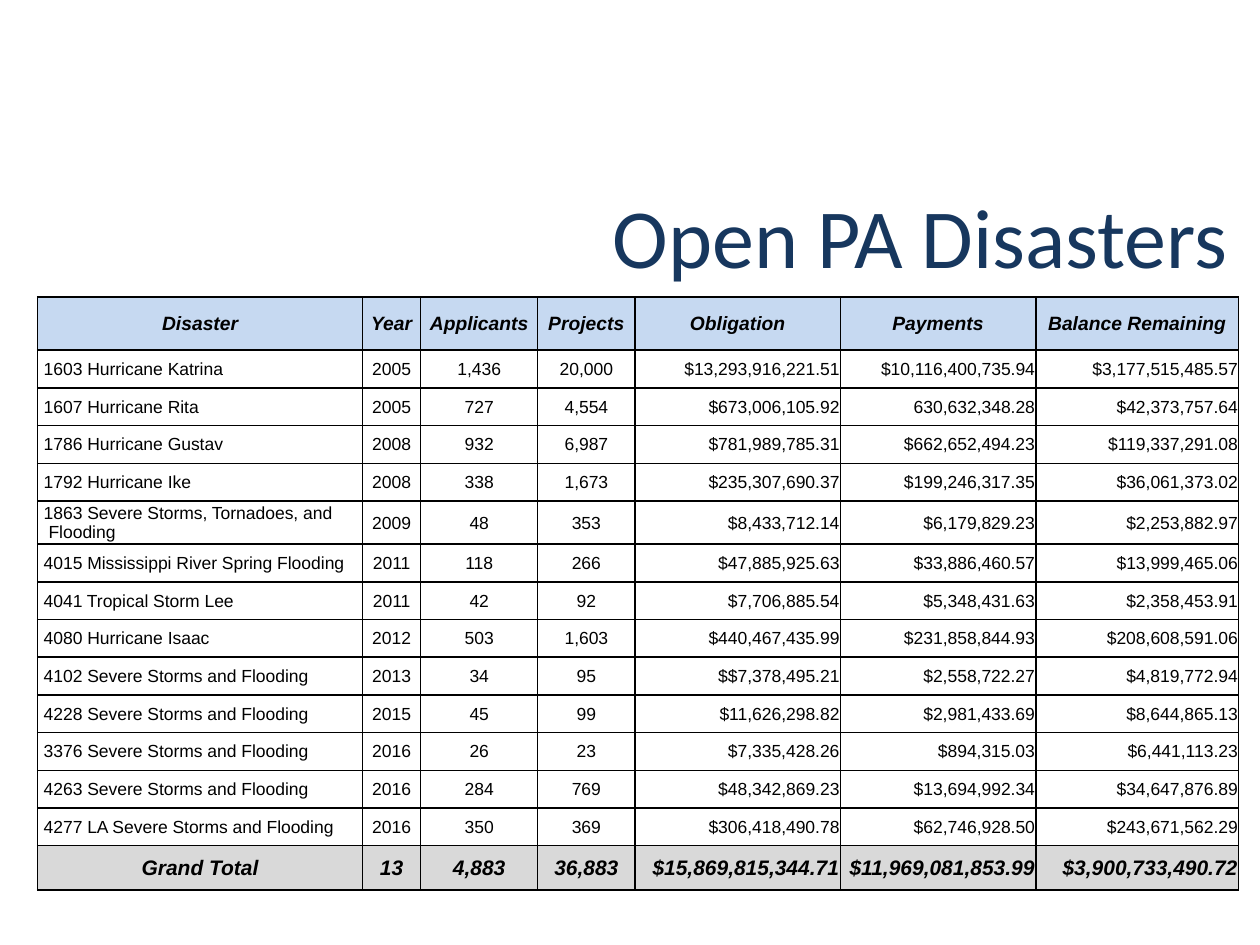
from lxml.etree import SubElement
from pptx import Presentation
from pptx.dml.color import RGBColor
from pptx.enum.text import MSO_ANCHOR as Anchor, PP_ALIGN as Align
from pptx.oxml.ns import qn
from pptx.util import Cm, Pt

NAVY = RGBColor(0x17, 0x37, 0x5E)
BLACK = RGBColor(0x00, 0x00, 0x00)
LIGHT_BLUE = RGBColor(0xC6, 0xD9, 0xF1)
LIGHT_GRAY = RGBColor(0xD9, 0xD9, 0xD9)

HEADER = ["Disaster", "Year", "Applicants", "Projects", "Obligation", "Payments", "Balance Remaining"]
DISASTERS = [
    ["1603 Hurricane Katrina", "2005", "1,436", "20,000", "$13,293,916,221.51", "$10,116,400,735.94", "$3,177,515,485.57"],
    ["1607 Hurricane Rita", "2005", "727", "4,554", "$673,006,105.92", "630,632,348.28", "$42,373,757.64"],
    ["1786 Hurricane Gustav", "2008", "932", "6,987", "$781,989,785.31", "$662,652,494.23", "$119,337,291.08"],
    ["1792 Hurricane Ike", "2008", "338", "1,673", "$235,307,690.37", "$199,246,317.35", "$36,061,373.02"],
    ["1863 Severe Storms, Tornadoes, and Flooding", "2009", "48", "353", "$8,433,712.14", "$6,179,829.23", "$2,253,882.97"],
    ["4015 Mississippi River Spring Flooding", "2011", "118", "266", "$47,885,925.63", "$33,886,460.57", "$13,999,465.06"],
    ["4041 Tropical Storm Lee", "2011", "42", "92", "$7,706,885.54", "$5,348,431.63", "$2,358,453.91"],
    ["4080 Hurricane Isaac", "2012", "503", "1,603", "$440,467,435.99", "$231,858,844.93", "$208,608,591.06"],
    ["4102 Severe Storms and Flooding", "2013", "34", "95", "$$7,378,495.21", "$2,558,722.27", "$4,819,772.94"],
    ["4228 Severe Storms and Flooding", "2015", "45", "99", "$11,626,298.82", "$2,981,433.69", "$8,644,865.13"],
    ["3376 Severe Storms and Flooding", "2016", "26", "23", "$7,335,428.26", "$894,315.03", "$6,441,113.23"],
    ["4263 Severe Storms and Flooding", "2016", "284", "769", "$48,342,869.23", "$13,694,992.34", "$34,647,876.89"],
    ["4277 LA Severe Storms and Flooding", "2016", "350", "369", "$306,418,490.78", "$62,746,928.50", "$243,671,562.29"],
]
TOTAL = ["Grand Total", "13", "4,883", "36,883", "$15,869,815,344.71", "$11,969,081,853.99", "$3,900,733,490.72"]

COLUMN_WIDTHS = [6.55, 1.17, 2.36, 1.96, 4.14, 3.94, 4.09]
HEADER_HEIGHT, DISASTER_HEIGHT, TOTAL_HEIGHT = 1.07, 0.76, 0.89
FIRST_MONEY_COLUMN = 4


def style_text(para, font_name, size, color, align, strong=False):
    para.alignment = align
    for span in para.runs:
        font = span.font
        font.name, font.size = font_name, Pt(size)
        font.bold = font.italic = strong
        font.color.rgb = color


def add_title(page, left, top, width, height):
    box = page.shapes.add_textbox(Cm(left), Cm(top), Cm(width), Cm(height))
    frame = box.text_frame
    frame.word_wrap = True
    frame.vertical_anchor = Anchor.MIDDLE
    frame.text = "Open PA Disasters"
    style_text(frame.paragraphs[0], "Calibri", 48, NAVY, Align.RIGHT)


def add_borders(cell):
    properties = cell._tc.get_or_add_tcPr()
    for side in ("lnL", "lnR", "lnT", "lnB"):
        line = SubElement(properties, qn(f"a:{side}"), w=str(Pt(1)))
        fill = SubElement(line, qn("a:solidFill"))
        SubElement(fill, qn("a:srgbClr"), val=str(BLACK))


def hang_indent(para, margin, hanging):
    properties = para._p.get_or_add_pPr()
    properties.set("marL", str(Cm(margin)))
    properties.set("indent", str(-Cm(hanging)))


def fill_row(table, row_index, values, height, size, fill_color=None):
    is_disaster = fill_color is None
    is_header = row_index == 0
    table.rows[row_index].height = Cm(height)
    for column, value in enumerate(values):
        cell = table.cell(row_index, column)
        cell.margin_left = cell.margin_right = cell.margin_top = Cm(0.02)
        cell.margin_bottom = 0
        cell.vertical_anchor = Anchor.MIDDLE
        add_borders(cell)
        if is_disaster:
            cell.fill.background()
        else:
            cell.fill.solid()
            cell.fill.fore_color.rgb = fill_color
        align = Align.CENTER
        if column >= FIRST_MONEY_COLUMN and not is_header:
            align = Align.RIGHT
        elif column == 0 and is_disaster:
            align = Align.LEFT
        cell.text_frame.text = value
        para = cell.text_frame.paragraphs[0]
        if align == Align.LEFT:
            hang_indent(para, 0.2, 0.1)
        style_text(para, "Arial", size, BLACK, align, strong=not is_disaster)


def add_disaster_table(page, left, top):
    height = HEADER_HEIGHT + len(DISASTERS) * DISASTER_HEIGHT + TOTAL_HEIGHT
    table = page.shapes.add_table(
        len(DISASTERS) + 2, len(HEADER),
        Cm(left), Cm(top), Cm(sum(COLUMN_WIDTHS)), Cm(height),
    ).table
    table.first_row = table.horz_banding = False
    for column, width in zip(table.columns, COLUMN_WIDTHS):
        column.width = Cm(width)
    fill_row(table, 0, HEADER, HEADER_HEIGHT, 11, LIGHT_BLUE)
    for row_index, values in enumerate(DISASTERS, start=1):
        fill_row(table, row_index, values, DISASTER_HEIGHT, 10)
    fill_row(table, len(DISASTERS) + 1, TOTAL, TOTAL_HEIGHT, 12, LIGHT_GRAY)


def main():
    deck = Presentation()
    deck.slide_width, deck.slide_height = Cm(25.4), Cm(19.05)
    page = deck.slides.add_slide(deck.slide_layouts[6])
    add_title(page, 1.78, 3.66, 23.22, 2.16)
    add_disaster_table(page, 0.76, 5.99)
    deck.save("out.pptx")


if __name__ == "__main__":
    main()
